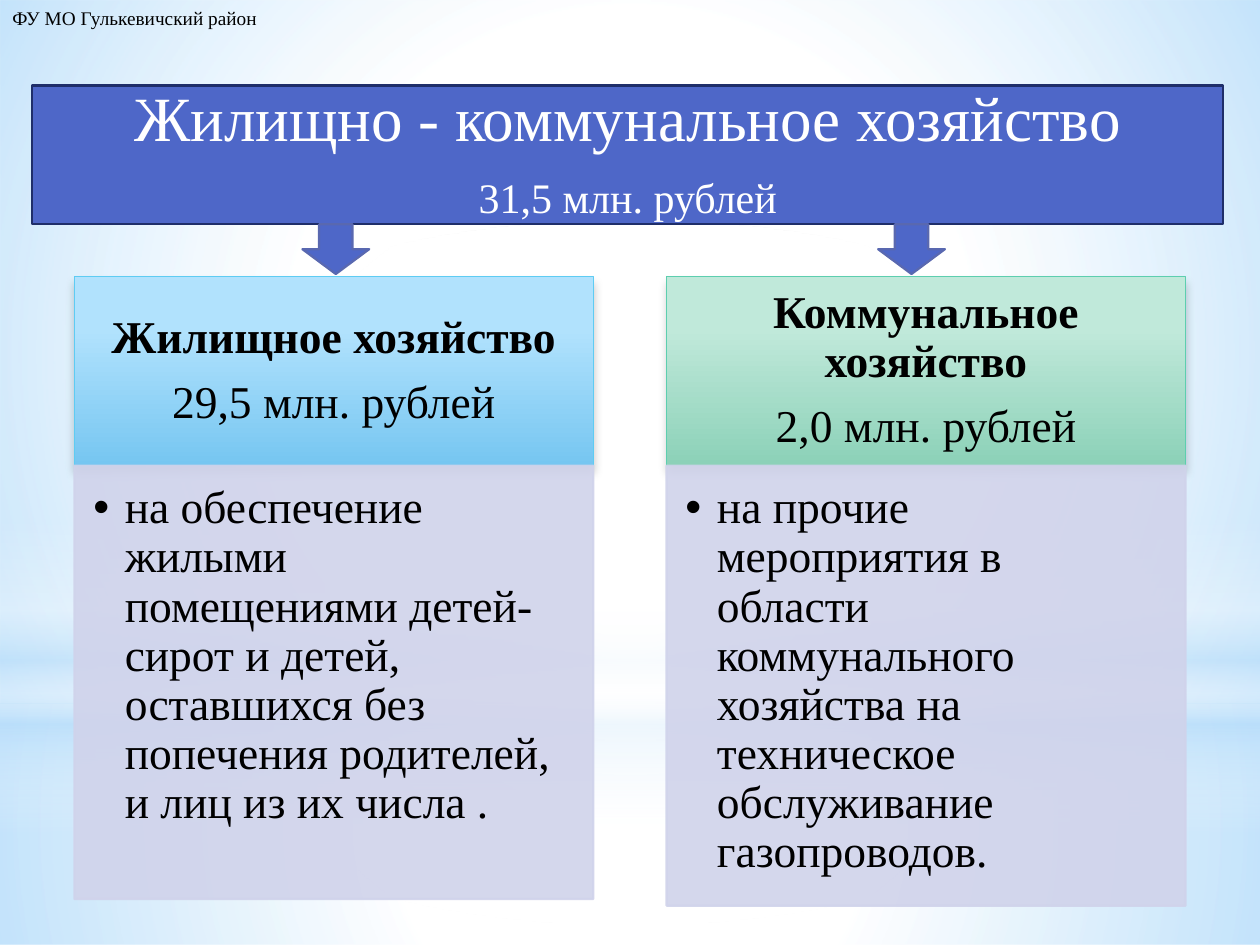
import lxml.etree
import pptx
import pptx.dml.color
import pptx.enum.shapes
import pptx.enum.text
import pptx.oxml.ns
import pptx.util
from dataclasses import dataclass

Pt = pptx.util.Pt
qn = pptx.oxml.ns.qn
SHAPE = pptx.enum.shapes.MSO_SHAPE
ALIGN = pptx.enum.text.PP_ALIGN
ANCHOR = pptx.enum.text.MSO_ANCHOR
AUTOFIT = pptx.enum.text.MSO_AUTO_SIZE


@dataclass(frozen=True)
class Theme:
    font: str = "Times New Roman"
    white: str = "FFFFFF"
    black: str = "000000"
    sky: str = "B4DCFA"
    banner: str = "4E67C8"
    banner_line: str = "1F2E69"
    arrow_line: str = "5968B0"
    panel: str = "D0D3EB"
    blue: tuple = ("B1E2FD", "76C6F1", "5ECCF3")
    green: tuple = ("C0E9DA", "8CD1B8", "5DCEAF")
    title_size: int = 36
    total_size: int = 24
    text_size: int = 26
    label_size: int = 11


def rgb(value):
    return pptx.dml.color.RGBColor.from_string(value)


def add_xml(parent, tag, **attrs):
    child = lxml.etree.SubElement(parent, qn(tag))
    for name, value in attrs.items():
        child.set(name, str(value))
    return child


def add_alpha(color, percent):
    add_xml(color, "a:alpha", val=percent * 1000)


class SlideBuilder:
    def __init__(self, slide, theme):
        self.s, self.theme = slide, theme

    def outline(self, sp, color, width):
        sp.line.color.rgb = rgb(color)
        sp.line.width = Pt(width)

    def paint(self, sp, fill, line, width=1.25):
        sp.fill.solid()
        sp.fill.fore_color.rgb = rgb(fill)
        self.outline(sp, line, width)
        sp.shadow.inherit = False

    def shape(self, kind, box):
        sp = self.s.shapes.add_shape(kind, *map(Pt, box))
        sp.shadow.inherit = False
        sp.line.fill.background()
        return sp

    def gradient(self, kind, box, stops, radial=False):
        """Add a shape whose stops are (position %, colour, opacity %)."""
        sp = self.shape(kind, box)
        sp.fill.gradient()
        grad = sp._element.spPr.find(qn("a:gradFill"))
        for child in list(grad):
            grad.remove(child)
        stop_list = add_xml(grad, "a:gsLst")
        for position, color, opacity in stops:
            stop = add_xml(stop_list, "a:gs", pos=position * 1000)
            add_alpha(add_xml(stop, "a:srgbClr", val=color), opacity)
        if radial:
            circle = add_xml(grad, "a:path", path="circle")
            add_xml(circle, "a:fillToRect", l=50000, t=50000, r=50000, b=50000)
        else:
            add_xml(grad, "a:lin", ang=5400000, scaled=0)
        return sp

    def placeholder(self, index, box):
        """Place a layout placeholder in front of everything drawn so far."""
        sp = self.s.placeholders[index]
        sp.left, sp.top, sp.width, sp.height = map(Pt, box)
        self.s.shapes._spTree.append(sp._element)
        return sp

    def text(self, sp, lines, color, align, anchor, insets):
        """Write lines of (text, size, bold, space after)."""
        tf = sp.text_frame
        tf.word_wrap, tf.auto_size = True, AUTOFIT.NONE
        tf.vertical_anchor = anchor
        (tf.margin_left, tf.margin_top,
         tf.margin_right, tf.margin_bottom) = map(Pt, insets)
        for i, (line, size, bold, after) in enumerate(lines):
            p = tf.add_paragraph() if i else tf.paragraphs[0]
            p.text, p.alignment, p.line_spacing = line, align, 0.9
            p.space_before, p.space_after = Pt(0), Pt(after)
            p.font.name, p.font.size, p.font.bold = self.theme.font, Pt(size), bold
            p.font.color.rgb = rgb(color)

    def background(self):
        t = self.theme
        lower = [(0, t.white, 91), (37, t.white, 76), (100, t.sky, 79)]
        upper = [(0, t.white, 89), (48, t.white, 62), (100, t.sky, 79)]
        band = [(0, t.white, 0), (29, t.white, 30), (45, t.sky, 40),
                (55, t.white, 26), (65, t.sky, 60), (100, t.white, 0)]
        glow = [(0, t.white, 100), (56, t.white, 0)]
        self.gradient(SHAPE.RECTANGLE, (0, 402, 720, 138), lower, True)
        self.gradient(SHAPE.RECTANGLE, (0, 0, 720, 402), upper, True)
        self.gradient(SHAPE.RECTANGLE, (0, 296.5, 720, 180), band)
        self.gradient(SHAPE.OVAL, (0, 126, 720, 402), glow, True)

    def banner(self, title, total, box):
        t = self.theme
        sp = self.placeholder(0, box)
        self.paint(sp, t.banner, t.banner_line)
        lines = [(title, t.title_size, False, 12.6), (total, t.total_size, False, 8.4)]
        self.text(sp, lines, t.white, ALIGN.CENTER, ANCHOR.MIDDLE, (7.2, 3.6, 7.2, 3.6))

    def heading(self, name, amount, colors, box):
        t = self.theme
        start, end, line = colors
        sp = self.gradient(SHAPE.RECTANGLE, box, [(28, start, 100), (100, end, 100)])
        self.outline(sp, line, 0.75)
        effects = sp._element.spPr.find(qn("a:effectLst"))
        shadow = add_xml(effects, "a:outerShdw", blurRad=Pt(5), dist=Pt(4),
                         dir=5400000, rotWithShape=0)
        add_alpha(add_xml(shadow, "a:srgbClr", val=t.black), 20)
        lines = [(name, t.text_size, True, 9.1), (amount, t.text_size, False, 9.1)]
        self.text(sp, lines, t.black, ALIGN.CENTER, ANCHOR.MIDDLE, (14.4, 8.6, 14.4, 8.6))

    def bullet_panel(self, index, item, box):
        t = self.theme
        sp = self.placeholder(index, box)
        self.paint(sp, t.panel, t.panel)
        for color in list(sp._element.spPr.iter(qn("a:srgbClr"))):
            add_alpha(color, 90)
        self.text(sp, [(item, t.text_size, False, 3.9)], t.black,
                  ALIGN.LEFT, ANCHOR.TOP, (10.8, 10.8, 14.4, 16.6))
        pPr = sp.text_frame.paragraphs[0]._p.get_or_add_pPr()
        pPr.set("marL", str(Pt(18)))
        pPr.set("indent", str(-Pt(18)))
        bullet = add_xml(pPr, "a:buChar", char="•")
        pPr.find(qn("a:defRPr")).addprevious(bullet)

    def label(self, text, box):
        t = self.theme
        sp = self.s.shapes.add_textbox(*map(Pt, box))
        self.text(sp, [(text, t.label_size, False, 0)], t.black,
                  ALIGN.LEFT, ANCHOR.TOP, (7.2, 3.6, 7.2, 3.6))
        sp.text_frame.paragraphs[0].line_spacing = 1.0
        sp.text_frame.auto_size = AUTOFIT.SHAPE_TO_FIT_TEXT

    def arrow(self, box):
        sp = self.shape(SHAPE.DOWN_ARROW, box)
        self.paint(sp, self.theme.banner, self.theme.arrow_line)


def main():
    prs = pptx.Presentation()
    prs.slide_width, prs.slide_height = Pt(720), Pt(540)
    theme = Theme()
    slide = SlideBuilder(prs.slides.add_slide(prs.slide_layouts[3]), theme)
    slide.background()

    columns = [
        ("Жилищное хозяйство", "29,5 млн. рублей", theme.blue, 247.7,
         "на обеспечение жилыми помещениями детей-сирот и детей, "
         "оставшихся без попечения родителей, и лиц из их числа ."),
        ("Коммунальное хозяйство", "2,0 млн. рублей", theme.green, 251.5,
         "на прочие мероприятия в области коммунального хозяйства "
         "на техническое обслуживание газопроводов."),
    ]
    left, pitch, width, top, head_height = 42.5, 338.4, 296.6, 157.8, 108.3
    for i, (name, amount, colors, height, item) in enumerate(columns):
        x = left + i * pitch
        slide.heading(name, amount, colors, (x, top, width, head_height))
        slide.bullet_panel(i + 1, item, (x, top + head_height, width, height))

    slide.banner("Жилищно - коммунальное хозяйство", "31,5 млн. рублей",
                 (18.4, 48.8, 680.6, 79.2))
    slide.label("ФУ МО Гулькевичский район", (0, 0, 172.8, 20.9))
    for x in (172.8, 501.8):
        slide.arrow((x, 128.2, 38.2, 28.4))
    prs.save("out.pptx")


if __name__ == "__main__":
    main()
